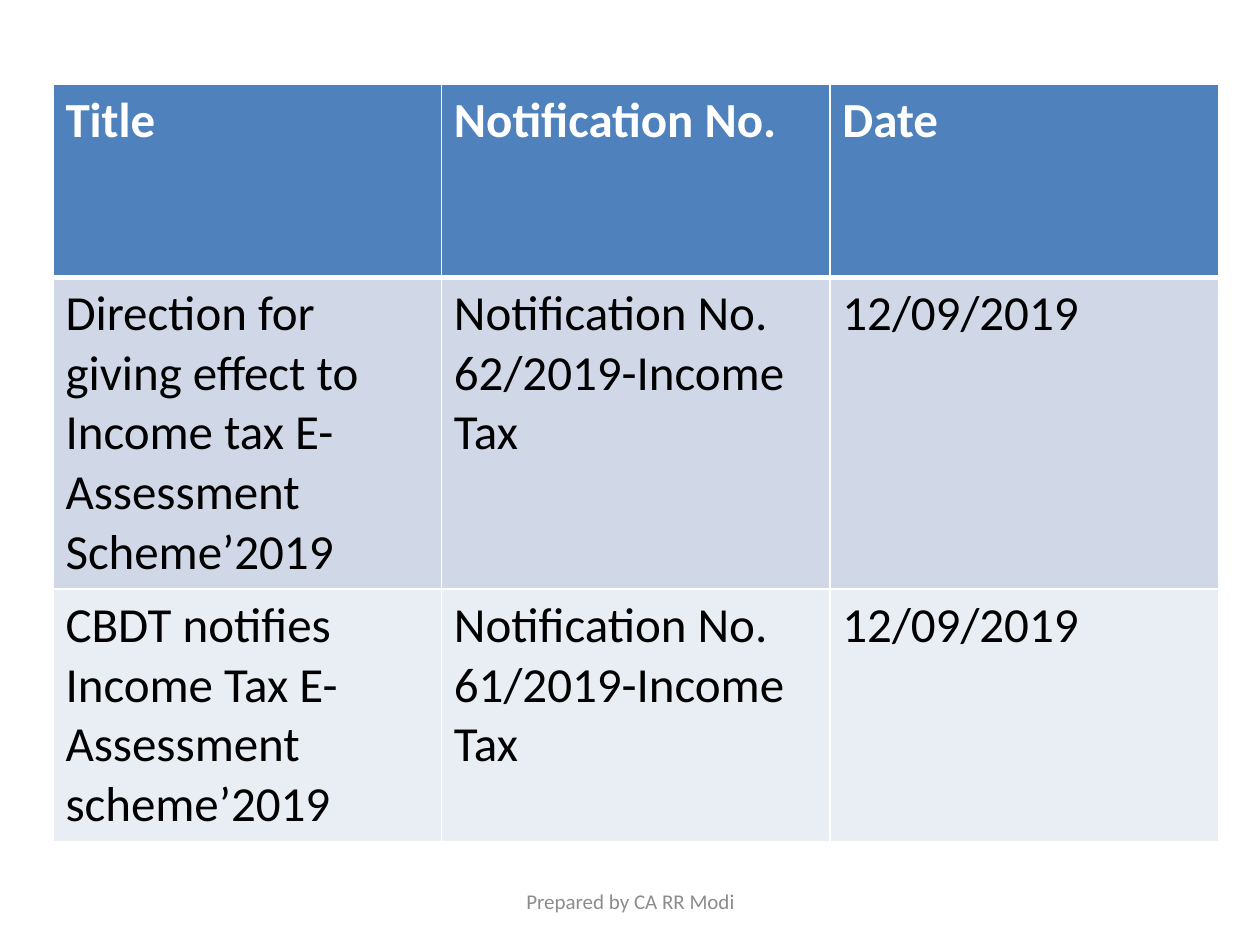
from dataclasses import dataclass

from lxml.etree import SubElement
from pptx import Presentation
from pptx.dml.color import RGBColor
from pptx.enum.text import MSO_ANCHOR, PP_ALIGN
from pptx.oxml.ns import qn
from pptx.util import Inches, Pt


@dataclass(frozen=True)
class Theme:
    font: str = "Calibri"
    table_size: int = 28
    footer_size: int = 12
    header_fill: str = "4F81BD"
    band_fills: tuple = ("D0D8E8", "E9EDF4")
    header_text: str = "FFFFFF"
    body_text: str = "000000"
    footer_text: str = "8C8C8C"
    border: str = "FFFFFF"
    thin_border: int = 1
    thick_border: int = 3


THEME = Theme()

NOTIFICATIONS = [
    ("Title", "Notification No.", "Date"),
    (
        "Direction for giving effect to Income tax E-Assessment Scheme’2019",
        "Notification No. 62/2019-Income Tax",
        "12/09/2019",
    ),
    (
        "CBDT notifies Income Tax E-Assessment scheme’2019",
        "Notification No. 61/2019-Income Tax",
        "12/09/2019",
    ),
]


def add_run(para, text, size, color, bold=False):
    span = para.add_run()
    span.text = text
    span.font.name = THEME.font
    span.font.size = Pt(size)
    span.font.bold = bold
    span.font.color.rgb = RGBColor.from_string(color)


def set_borders(cell, top, bottom):
    properties = cell._tc.get_or_add_tcPr()
    thin = THEME.thin_border
    edges = {"a:lnL": thin, "a:lnR": thin, "a:lnT": top, "a:lnB": bottom}
    for position, (tag, width) in enumerate(edges.items()):
        line = SubElement(properties, qn(tag), w=str(Pt(width)))
        fill = SubElement(line, qn("a:solidFill"))
        SubElement(fill, qn("a:srgbClr"), val=THEME.border)
        properties.insert(position, line)


def style_cell(cell, text, row_index):
    is_header = row_index == 0
    bands = THEME.band_fills
    fill = THEME.header_fill if is_header else bands[(row_index - 1) % len(bands)]
    color = THEME.header_text if is_header else THEME.body_text
    cell.fill.solid()
    cell.fill.fore_color.rgb = RGBColor.from_string(fill)
    add_run(cell.text_frame.paragraphs[0], text, THEME.table_size, color, is_header)
    set_borders(
        cell,
        top=THEME.thick_border if row_index == 1 else THEME.thin_border,
        bottom=THEME.thick_border if is_header else THEME.thin_border,
    )


def add_notification_table(page, rows):
    column_count = len(rows[0])
    frame = page.shapes.add_table(
        len(rows), column_count,
        Inches(0.42), Inches(0.67), Inches(9.25), Inches(4.59),
    )
    for row_index, texts in enumerate(rows):
        for column_index, text in enumerate(texts):
            style_cell(frame.table.cell(row_index, column_index), text, row_index)


def add_footer(page, text):
    box = page.shapes.add_textbox(Inches(3.42), Inches(6.95), Inches(3.17), Inches(0.4))
    box.text_frame.word_wrap = True
    box.text_frame.vertical_anchor = MSO_ANCHOR.MIDDLE
    para = box.text_frame.paragraphs[0]
    para.alignment = PP_ALIGN.CENTER
    add_run(para, text, THEME.footer_size, THEME.footer_text)


def main():
    deck = Presentation()
    deck.slide_width = Inches(10)
    deck.slide_height = Inches(7.5)
    page = deck.slides.add_slide(deck.slide_layouts[6])
    add_notification_table(page, NOTIFICATIONS)
    add_footer(page, "Prepared by CA RR Modi")
    deck.save("out.pptx")


if __name__ == "__main__":
    main()
